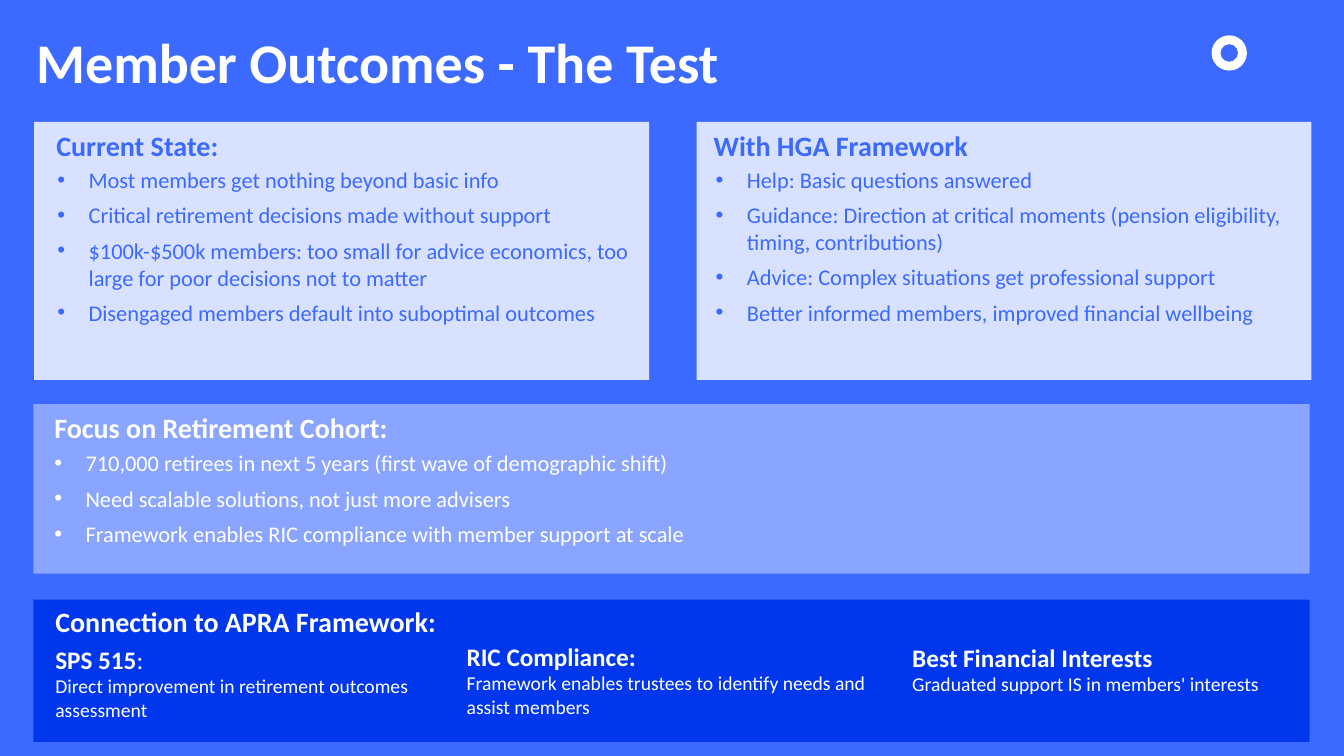
"""Build the slide on the member outcomes test: two states, a cohort and a framework."""
from pptx import Presentation
from pptx.dml.color import RGBColor as RGB
from pptx.enum.shapes import MSO_SHAPE as SHAPE
from pptx.enum.text import MSO_AUTO_SIZE as FIT
from pptx.oxml.ns import qn
from pptx.util import Inches, Pt

THEME = {
    "font": "Calibri",
    "blue": RGB.from_string("3C69FF"),
    "pale": RGB.from_string("D8E1FF"),
    "mid": RGB.from_string("8AA5FF"),
    "deep": RGB.from_string("0037EC"),
    "white": RGB.from_string("FFFFFF"),
    "title": Pt(40), "heading": Pt(20), "topic": Pt(18), "body": Pt(16), "note": Pt(14),
}

prs = Presentation()
prs.slide_width, prs.slide_height = Inches(13.33), Inches(7.5)
COL, ROW = prs.slide_width / 100, prs.slide_height / 100
s = prs.slides.add_slide(prs.slide_layouts[6])
s.background.fill.solid()
s.background.fill.fore_color.rgb = THEME["blue"]


def add_block(kind, at, color):
    """Place a plain filled shape on the 100 by 100 grid."""
    x, y, w, h = at
    sp = s.shapes.add_shape(kind, int(x * COL), int(y * ROW), int(w * COL), int(h * ROW))
    sp.shadow.inherit = False
    sp.fill.solid()
    sp.fill.fore_color.rgb = THEME[color]
    sp.line.fill.background()


def add_text(at, paragraphs, color, bullet=False, before=0):
    """Place paragraphs of (text, size, bold) runs; a None run is a line break."""
    x, y, w, h = at
    sp = s.shapes.add_textbox(int(x * COL), int(y * ROW), int(w * COL), int(h * ROW))
    tf = sp.text_frame
    tf.word_wrap, tf.auto_size = True, FIT.SHAPE_TO_FIT_TEXT
    for i, runs in enumerate(paragraphs):
        p = tf.paragraphs[0] if i == 0 else tf.add_paragraph()
        p.space_before = Pt(before)
        if bullet:
            pPr = p._p.get_or_add_pPr()
            indent = int(2.33 * COL)
            pPr.set("marL", str(indent))
            pPr.set("indent", str(-indent))
            pPr.makeelement(qn("a:buFont"), {})
            for tag, key, value in (("a:buFont", "typeface", "Arial"), ("a:buChar", "char", "•")):
                pPr.append(pPr.makeelement(qn(tag), {key: value}))
        for run in runs:
            if run is None:
                p.add_line_break()
                continue
            r = p.add_run()
            r.text, size, bold = run
            for name, value in {"name": THEME["font"], "size": THEME[size], "bold": bold}.items():
                setattr(r.font, name, value)
            r.font.color.rgb = THEME[color]
    return tf


add_block(SHAPE.DONUT, (90.15, 4.67, 2.63, 4.67), "white")
tf = add_text((2.7, 4.67, 94.8, 7.33), [[("Member Outcomes - The Test", "title", True)]], "white")
tf.auto_size = FIT.NONE
tf.paragraphs[0].line_spacing = 0.9
for side in ("left", "top", "right", "bottom"):
    setattr(tf, f"margin_{side}", 0)

panels = [
    ("Current State:", (2.55, 16.13, 45.75, 34.13), "pale", "blue",
     (3.45, 16.4, 25.8, 5.87), (3.53, 21.33, 45, 30.8), [
         "Most members get nothing beyond basic info",
         "Critical retirement decisions made without support",
         "$100k-$500k members: too small for advice economics, too large for poor decisions not to matter",
         "Disengaged members default into suboptimal outcomes"]),
    ("With HGA Framework", (51.83, 16.13, 45.75, 34.13), "pale", "blue",
     (52.36, 16.4, 25.8, 5.87), (52.51, 21.33, 44.94, 27.2), [
         "Help: Basic questions answered",
         "Guidance: Direction at critical moments (pension eligibility, timing, contributions)",
         "Advice: Complex situations get professional support",
         "Better informed members, improved financial wellbeing"]),
    ("Focus on Retirement Cohort:", (2.48, 53.47, 94.97, 22.4), "mid", "white",
     (3.3, 53.6, 39, 5.87), (3.3, 58.8, 90.32, 14.8), [
         "710,000 retirees in next 5 years (first wave of demographic shift)",
         "Need scalable solutions, not just more advisers",
         "Framework enables RIC compliance with member support at scale"]),
    ("Connection to APRA Framework:", (2.48, 79.33, 94.97, 18.8), "deep", "white",
     (3.38, 79.33, 39, 5.87), None, []),
]
for heading, panel_at, fill, color, heading_at, list_at, items in panels:
    add_block(SHAPE.RECTANGLE, panel_at, fill)
    add_text(heading_at, [[(heading, "heading", True)]], color)
    if items:
        add_text(list_at, [[(item, "body", False)] for item in items], color, True, 6)

topics = [
    ((3.38, 84.53, 30.98, 11.73), [("SPS 515", "topic", True), (": ", "topic", False)],
     "Direct improvement in retirement outcomes assessment"),
    ((33.98, 84.13, 32.03, 11.73), [("RIC Compliance:", "topic", True)],
     "Framework enables trustees to identify needs and assist members"),
    ((67.14, 84.27, 29.18, 8.53), [("Best Financial Interests", "topic", True)],
     "Graduated support IS in members' interests"),
]
for at, topic, note in topics:
    add_text(at, [[*topic, None, (note, "note", False)]], "white", before=6)

prs.save("out.pptx")
